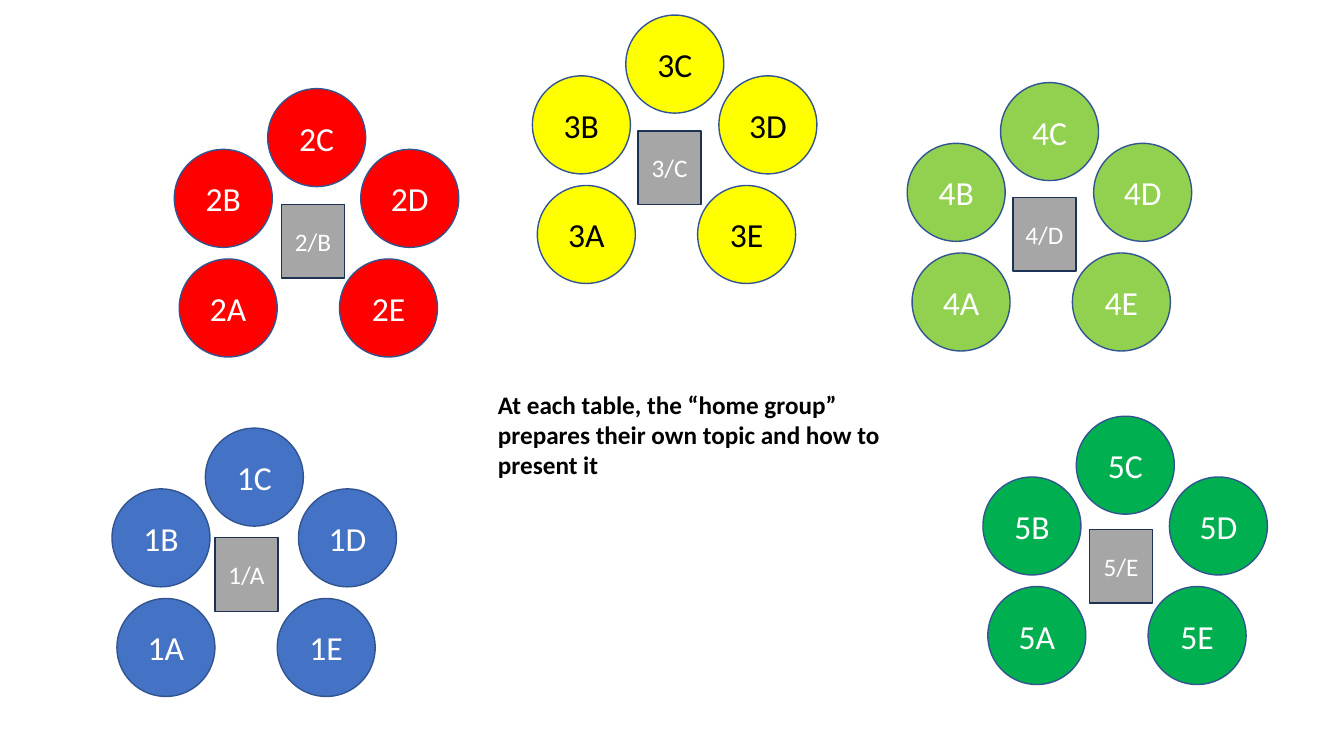
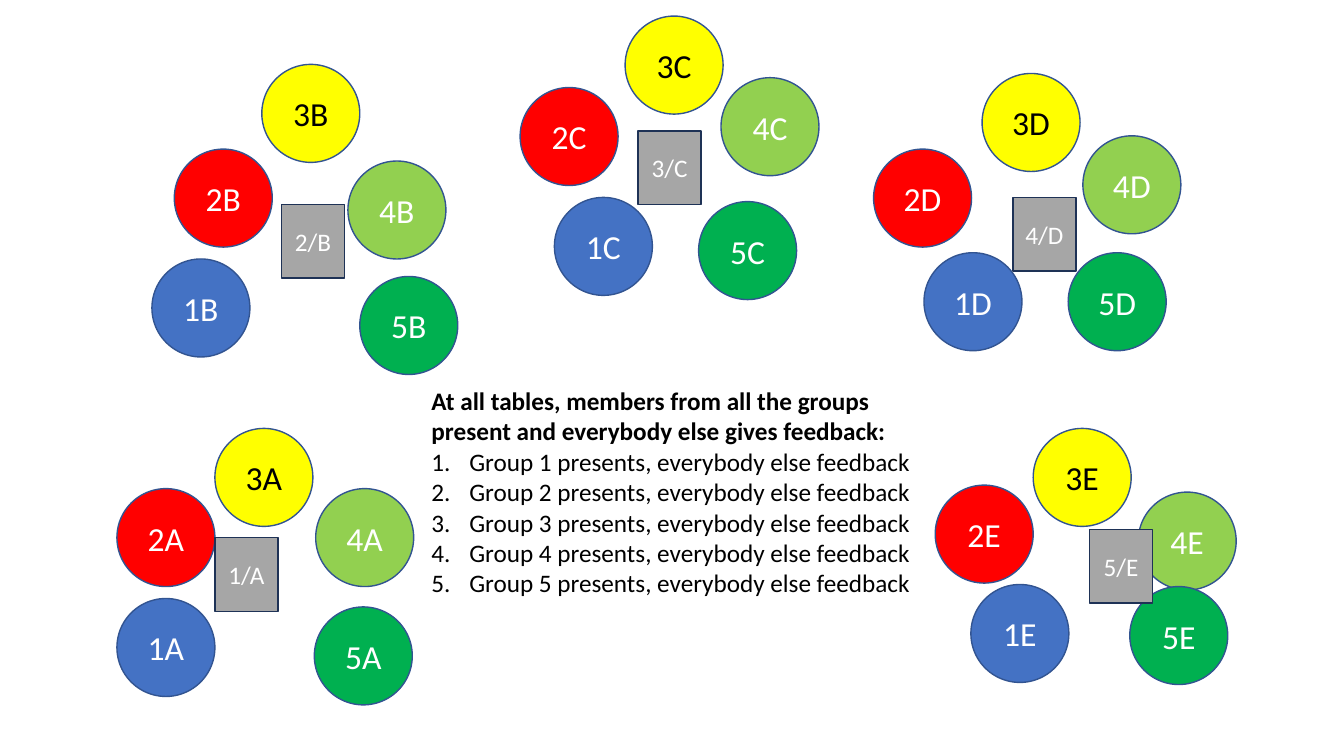
from lxml.etree import SubElement
from pptx import Presentation
from pptx.dml.color import RGBColor
from pptx.enum.shapes import MSO_SHAPE as Preset
from pptx.enum.text import MSO_ANCHOR as Anchor, MSO_AUTO_SIZE as AutoSize, PP_ALIGN as Align
from pptx.oxml.ns import qn
from pptx.util import Pt

WHITE = RGBColor(0xFF, 0xFF, 0xFF)
BLACK = RGBColor(0x00, 0x00, 0x00)
BLUE = RGBColor(0x44, 0x72, 0xC4)
RED = RGBColor(0xFF, 0x00, 0x00)
YELLOW = RGBColor(0xFF, 0xFF, 0x00)
LIME = RGBColor(0x92, 0xD0, 0x50)
GREEN = RGBColor(0x00, 0xB0, 0x50)
GREY = RGBColor(0xA6, 0xA6, 0xA6)
SEAT_EDGE = RGBColor(0x32, 0x54, 0x91)
DESK_EDGE = RGBColor(0x1E, 0x32, 0x56)

TITLE_AND_LIST, TITLE_ONLY = 1, 5
GROUP_COLORS = {1: BLUE, 2: RED, 3: YELLOW, 4: LIME, 5: GREEN}
DESKS = {"A": (153.5, 384), "B": (201, 146), "C": (455.8, 93.5),
         "D": (723.6, 141), "E": (778.3, 378)}
HOME_ORIGINS = {1: (83.5, 427.5), 2: (128, 185), 3: (383.8, 132.5),
                4: (651.5, 180.7), 5: (705.6, 419)}
HOME_OFFSETS = {"A": (0, 0), "B": (-3.5, -78.3), "C": (63.2, -121.7),
                "D": (129.7, -78.3), "E": (114.5, 0)}
MIXED_SEATS = {
    "A": [(83.5, 427.5), (83.5, 349), (153.5, 306), (225.5, 349), (224.5, 433.5)],
    "B": [(108.5, 185), (124.5, 106.5), (187, 46), (248.5, 115), (257, 197.5)],
    "C": [(396, 141), (371.5, 62.5), (446.5, 11.5), (515, 55.5), (499, 144)],
    "D": [(660, 180.5), (624, 106.5), (701.5, 52.5), (773.5, 97), (763, 180.5)],
    "E": [(693.5, 417.5), (668, 346.5), (738, 306), (813, 351.5), (807, 419)],
}


def write(paragraph, text, *, size=18, color=BLACK, bold=False, align=Align.LEFT):
    paragraph.alignment = align
    paragraph.line_spacing = 1.0
    paragraph.space_before = paragraph.space_after = Pt(0)
    run = paragraph.add_run()
    run.text = text
    run.font.name = "Calibri"
    run.font.size = Pt(size)
    run.font.bold = bold
    run.font.color.rgb = color


class SeatingDeck:
    """Seating plans with round seats, desks and instructions in one style."""

    seat_size = 70
    desk_size = (45, 52.7)
    list_indent = 27

    def __init__(self):
        self.deck = Presentation()
        self.deck.slide_width, self.deck.slide_height = Pt(960), Pt(540)
        self.slide = None

    def new_slide(self, layout):
        self.slide = self.deck.slides.add_slide(self.deck.slide_layouts[layout])

    def place(self, placeholder, left, top, width, height):
        placeholder.left, placeholder.top = Pt(left), Pt(top)
        placeholder.width, placeholder.height = Pt(width), Pt(height)
        frame = placeholder.text_frame
        frame.word_wrap = True
        frame.auto_size = AutoSize.NONE
        frame.vertical_anchor = Anchor.TOP
        return frame

    def title(self, text, *box):
        frame = self.place(self.slide.shapes.title, *box)
        write(frame.paragraphs[0], text, bold=True)

    def numbered_list(self, steps, *box):
        frame = self.place(self.slide.placeholders[1], *box)
        for index, step in enumerate(steps):
            paragraph = frame.add_paragraph() if index else frame.paragraphs[0]
            write(paragraph, step)
            properties = paragraph._p.get_or_add_pPr()
            properties.set("marL", str(Pt(self.list_indent)))
            properties.set("indent", str(-Pt(self.list_indent)))
            SubElement(properties, qn("a:buFont"), typeface="+mj-lt")
            SubElement(properties, qn("a:buAutoNum"), type="arabicPeriod")

    def labelled_shape(self, preset, label, left, top, width, height, fill, edge, **text_format):
        shape = self.slide.shapes.add_shape(preset, Pt(left), Pt(top), Pt(width), Pt(height))
        shape.shadow.inherit = False
        shape.fill.solid()
        shape.fill.fore_color.rgb = fill
        shape.line.color.rgb = edge
        shape.line.width = Pt(1)
        shape.text_frame.vertical_anchor = Anchor.MIDDLE
        write(shape.text_frame.paragraphs[0], label, align=Align.CENTER, **text_format)

    def seat(self, group, letter, left, top):
        fill = GROUP_COLORS[group]
        self.labelled_shape(Preset.OVAL, f"{group}{letter}", left, top,
                            self.seat_size, self.seat_size, fill, SEAT_EDGE,
                            size=24, color=BLACK if fill == YELLOW else WHITE)

    def desks(self):
        for number, (letter, corner) in enumerate(DESKS.items(), 1):
            self.labelled_shape(Preset.RECTANGLE, f"{number}/{letter}", *corner,
                                *self.desk_size, GREY, DESK_EDGE, color=WHITE)

    def save(self):
        self.deck.save("out.pptx")


def home_groups(plan):
    plan.new_slide(TITLE_ONLY)
    plan.title("At each table, the “home group” prepares their own topic and how to present it",
               348.5, 274.3, 305, 73)
    for group, (left, top) in HOME_ORIGINS.items():
        for letter, (across, down) in HOME_OFFSETS.items():
            plan.seat(group, letter, left + across, top + down)
    plan.desks()


def mixed_groups(plan):
    plan.new_slide(TITLE_AND_LIST)
    plan.title("At all tables, members from all the groups present and everybody else gives feedback:",
               301, 271.5, 373, 51)
    plan.numbered_list([f"Group {group} presents, everybody else feedback" for group in GROUP_COLORS],
                       301, 315.3, 373, 117)
    for letter, seats in MIXED_SEATS.items():
        for group, corner in enumerate(seats, 1):
            plan.seat(group, letter, *corner)
    plan.desks()


def main():
    plan = SeatingDeck()
    home_groups(plan)
    mixed_groups(plan)
    plan.save()


if __name__ == "__main__":
    main()
